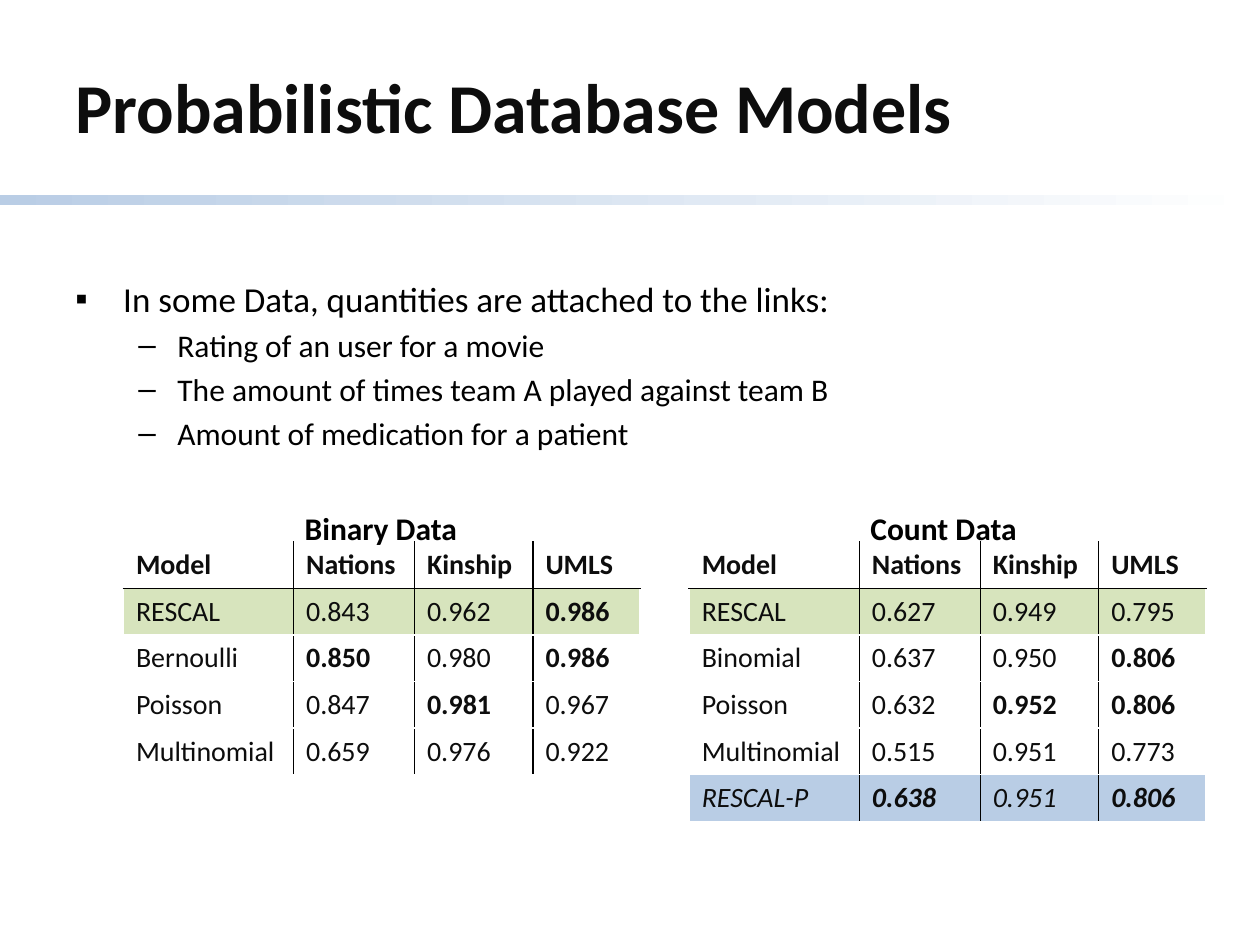
from lxml.etree import SubElement
from pptx import Presentation
from pptx.dml.color import RGBColor
from pptx.enum.shapes import MSO_SHAPE
from pptx.enum.text import MSO_ANCHOR, MSO_AUTO_SIZE
from pptx.oxml import parse_xml
from pptx.oxml.ns import nsdecls, qn
from pptx.util import Inches, Pt

BLACK = RGBColor(0x00, 0x00, 0x00)
DARK = RGBColor(0x0D, 0x0D, 0x0D)
WHITE = RGBColor(0xFF, 0xFF, 0xFF)
GREEN = RGBColor(0xD7, 0xE4, 0xBD)
BLUE = RGBColor(0xB9, 0xCD, 0xE5)

HEAD = ["Model", "Nations", "Kinship", "UMLS"]
WIDTHS = [1.35, 0.96, 0.94, 0.85]
BINARY = [
    ["RESCAL", "0.843", "0.962", "0.986"],
    ["Bernoulli", "0.850", "0.980", "0.986"],
    ["Poisson", "0.847", "0.981", "0.967"],
    ["Multinomial", "0.659", "0.976", "0.922"],
]
COUNT = [
    ["RESCAL", "0.627", "0.949", "0.795"],
    ["Binomial", "0.637", "0.950", "0.806"],
    ["Poisson", "0.632", "0.952", "0.806"],
    ["Multinomial", "0.515", "0.951", "0.773"],
    ["RESCAL-P", "0.638", "0.951", "0.806"],
]
POINTS = [
    (0, "In some Data, quantities are attached to the links:"),
    (1, "Rating of an user for a movie"),
    (1, "The amount of times team A played against team B"),
    (1, "Amount of medication for a patient"),
]
LEVELS = [(20, 0.38, 0.38, "▪"), (18, 0.81, 0.31, "–")]
TINTS = {"RESCAL": GREEN, "RESCAL-P": BLUE}


class Deck:
    font = "Calibri"

    def __init__(self, slide):
        self.slide = slide

    def style(self, para, size, color=BLACK, bold=False, italic=False):
        for run in para.runs:
            font = run.font
            font.name, font.size = self.font, Pt(size)
            font.bold, font.italic = bold, italic
            font.color.rgb = color

    def text(self, words, left, top, width, height, size, color=BLACK, wrap=True):
        box = self.slide.shapes.add_textbox(
            Inches(left), Inches(top), Inches(width), Inches(height))
        frame = box.text_frame
        frame.text = words
        frame.word_wrap = wrap
        if wrap:
            frame.vertical_anchor = MSO_ANCHOR.MIDDLE
        else:
            frame.auto_size = MSO_AUTO_SIZE.SHAPE_TO_FIT_TEXT
        self.style(frame.paragraphs[0], size, color, bold=True)

    def bullets(self, items, left, top, width, height):
        box = self.slide.shapes.add_textbox(
            Inches(left), Inches(top), Inches(width), Inches(height))
        frame = box.text_frame
        frame.word_wrap = True
        frame.margin_top = Inches(0.45)
        for index, (level, words) in enumerate(items):
            para = frame.add_paragraph() if index else frame.paragraphs[0]
            size, margin, hang, mark = LEVELS[level]
            para.text = words
            para.level = level
            para.space_before = Pt(size * 0.2)
            self.style(para, size)
            props = para._p.get_or_add_pPr()
            props.set("marL", str(Inches(margin)))
            props.set("indent", str(-Inches(hang)))
            SubElement(props, qn("a:buFont")).set("typeface", "Arial")
            SubElement(props, qn("a:buChar")).set("char", mark)

    def band(self, left, top, width, height):
        bar = self.slide.shapes.add_shape(
            MSO_SHAPE.RECTANGLE, Inches(left), Inches(top), Inches(width), Inches(height))
        bar.shadow.inherit = False
        bar.line.fill.background()
        bar.fill.gradient()
        bar.fill.gradient_angle = 0
        for stop, color, place in zip(bar.fill.gradient_stops, (BLUE, WHITE), (0, 1)):
            stop.color.rgb = color
            stop.position = place

    def border(self, cell, colors):
        props = cell._tc.get_or_add_tcPr()
        for index, (side, color) in enumerate(zip("LRTB", colors)):
            props.insert(index, parse_xml(
                f'<a:ln{side} {nsdecls("a")} w="{Pt(1)}"><a:solidFill>'
                f'<a:srgbClr val="{color}"/></a:solidFill></a:ln{side}>'))

    def table(self, data, left, top):
        rows = [HEAD] + data
        high = 0.37
        grid = self.slide.shapes.add_table(
            len(rows), len(HEAD), Inches(left), Inches(top),
            Inches(sum(WIDTHS)), Inches(high * len(rows))).table
        grid.first_row = grid.horz_banding = False
        for col, width in zip(grid.columns, WIDTHS):
            col.width = Inches(width)
        best = [max(col) for col in zip(*data)]
        last = len(HEAD) - 1
        for r, row in enumerate(rows):
            grid.rows[r].height = Inches(high)
            for c, words in enumerate(row):
                cell = grid.cell(r, c)
                cell.text_frame.text = words
                bold = r == 0 or (c > 0 and words == best[c])
                self.style(cell.text_frame.paragraphs[0], 16, DARK, bold,
                           row[0] == "RESCAL-P")
                if row[0] in TINTS:
                    cell.fill.solid()
                    cell.fill.fore_color.rgb = TINTS[row[0]]
                else:
                    cell.fill.background()
                lines = (c > 0, c < last, r == 1, r == 0)
                self.border(cell, [BLACK if line else WHITE for line in lines])


def main():
    show = Presentation()
    show.slide_width, show.slide_height = Inches(10), Inches(7.5)
    deck = Deck(show.slides.add_slide(show.slide_layouts[6]))
    deck.text("Probabilistic Database Models", 0.5, 0.13, 9, 1.42, 40, DARK)
    deck.bullets(POINTS, 0.5, 1.75, 9, 2.08)
    deck.band(0, 1.55, 10, 0.08)
    for name, data, left, width in (
            ("Binary Data", BINARY, 0.98, 1.42), ("Count Data", COUNT, 5.47, 1.37)):
        deck.table(data, left, 4.3)
        deck.text(name, left + 1.34, 3.99, width, 0.4, 18, wrap=False)
    show.save("out.pptx")


if __name__ == "__main__":
    main()
